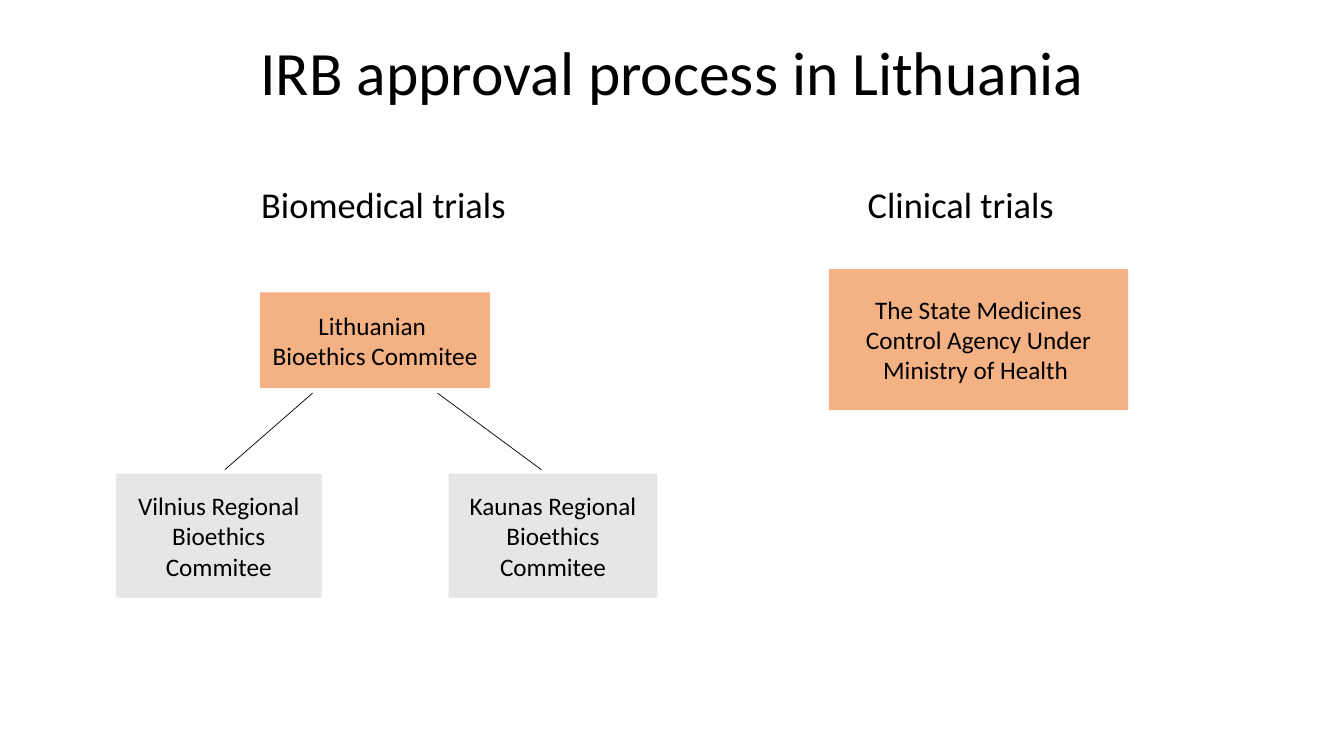
"""Build the slide on the IRB approval process in Lithuania."""
import dataclasses

import pptx
import pptx.dml.color
import pptx.enum.shapes
import pptx.enum.text
import pptx.oxml.ns
import pptx.presentation
import pptx.shapes.autoshape
import pptx.slide
import pptx.util

WIDE, HIGH = pptx.util.Inches(13.33), pptx.util.Inches(7.5)
COLS, ROWS = 133.3, 75
FONT = "Calibri"
COLOURS = {"ink": "000000", "main": "F4B183", "local": "E7E6E6"}


@dataclasses.dataclass(frozen=True)
class Label:
    words: str
    col: float
    row: float
    cols: float
    rows: float
    size: int
    pitch: float = 1.0


@dataclasses.dataclass(frozen=True)
class Box:
    words: str
    col: float
    row: float
    cols: float
    rows: float
    fill: str


@dataclasses.dataclass(frozen=True)
class Branch:
    col: float
    end: float


LABELS = [
    Label("IRB approval process in Lithuania", 9.2, 3.6, 115, 7.8, 44, 0.9),
    Label("Biomedical trials", 22.3, 16.7, 31.5, 7, 26),
    Label("Clinical trials", 78.7, 16.7, 33.2, 7, 26),
]
BOXES = [
    Box("Lithuanian \nBioethics Commitee", 25.8, 29, 22.8, 9.5, "main"),
    Box("Vilnius Regional Bioethics Commitee", 11.5, 47, 20.4, 12.3, "local"),
    Box("Kaunas Regional Bioethics Commitee", 44.5, 47, 20.7, 12.3, "local"),
    Box("The State Medicines Control Agency Under Ministry of Health ",
        82.2, 26.7, 29.7, 14, "main"),
]
BRANCHES = [Branch(31, 22.3), Branch(43.4, 53.7)]
TOP, BASE = 39, 46.6


def across(cols: float) -> int:
    """Turn grid columns into a length."""
    return round(WIDE * cols / COLS)


def down(rows: float) -> int:
    """Turn grid rows into a length."""
    return round(HIGH * rows / ROWS)


def place(item: Label | Box) -> tuple[int, int, int, int]:
    """Give the left, top, width and height of an item."""
    return across(item.col), down(item.row), across(item.cols), down(item.rows)


def hue(name: str) -> pptx.dml.color.RGBColor:
    """Look up a named colour."""
    return pptx.dml.color.RGBColor.from_string(COLOURS[name])


def write(shape: pptx.shapes.autoshape.Shape, words: str, *,
          size: int = 18, pitch: float = 1.0, ink: str = "ink") -> None:
    """Fill a shape with centred text, one paragraph a line."""
    frame = shape.text_frame
    frame.word_wrap = True
    frame.vertical_anchor = pptx.enum.text.MSO_ANCHOR.MIDDLE
    frame.text = words
    for para in frame.paragraphs:
        para.alignment = pptx.enum.text.PP_ALIGN.CENTER
        para.line_spacing = pitch
        for run in para.runs:
            run.font.name = FONT
            run.font.size = pptx.util.Pt(size)
            run.font.color.rgb = hue(ink)


def add_label(slide: pptx.slide.Slide, label: Label) -> None:
    """Add a title or heading."""
    shape = slide.shapes.add_textbox(*place(label))
    write(shape, label.words, size=label.size, pitch=label.pitch)


def add_box(slide: pptx.slide.Slide, box: Box) -> None:
    """Add a filled box for one body."""
    shape = slide.shapes.add_shape(
        pptx.enum.shapes.MSO_SHAPE.RECTANGLE, *place(box))
    shape.shadow.inherit = False
    shape.fill.solid()
    shape.fill.fore_color.rgb = hue(box.fill)
    shape.line.fill.background()
    write(shape, box.words)


def add_branch(slide: pptx.slide.Slide, branch: Branch) -> None:
    """Add a thin line from the national to a regional committee."""
    line = slide.shapes.add_connector(
        pptx.enum.shapes.MSO_CONNECTOR.STRAIGHT,
        across(branch.col), down(TOP), across(branch.end), down(BASE))
    line.line.color.rgb = hue("ink")
    line.line.width = pptx.util.Pt(0.5)
    props = line._element.spPr
    props.append(props.makeelement(pptx.oxml.ns.qn("a:effectLst"), {}))


def main() -> None:
    """Build and save the slide."""
    deck = pptx.Presentation()
    deck.slide_width, deck.slide_height = WIDE, HIGH
    slide = deck.slides.add_slide(deck.slide_layouts[6])
    for label in LABELS:
        add_label(slide, label)
    for box in BOXES:
        add_box(slide, box)
    for branch in BRANCHES:
        add_branch(slide, branch)
    deck.save("out.pptx")


if __name__ == "__main__":
    main()
